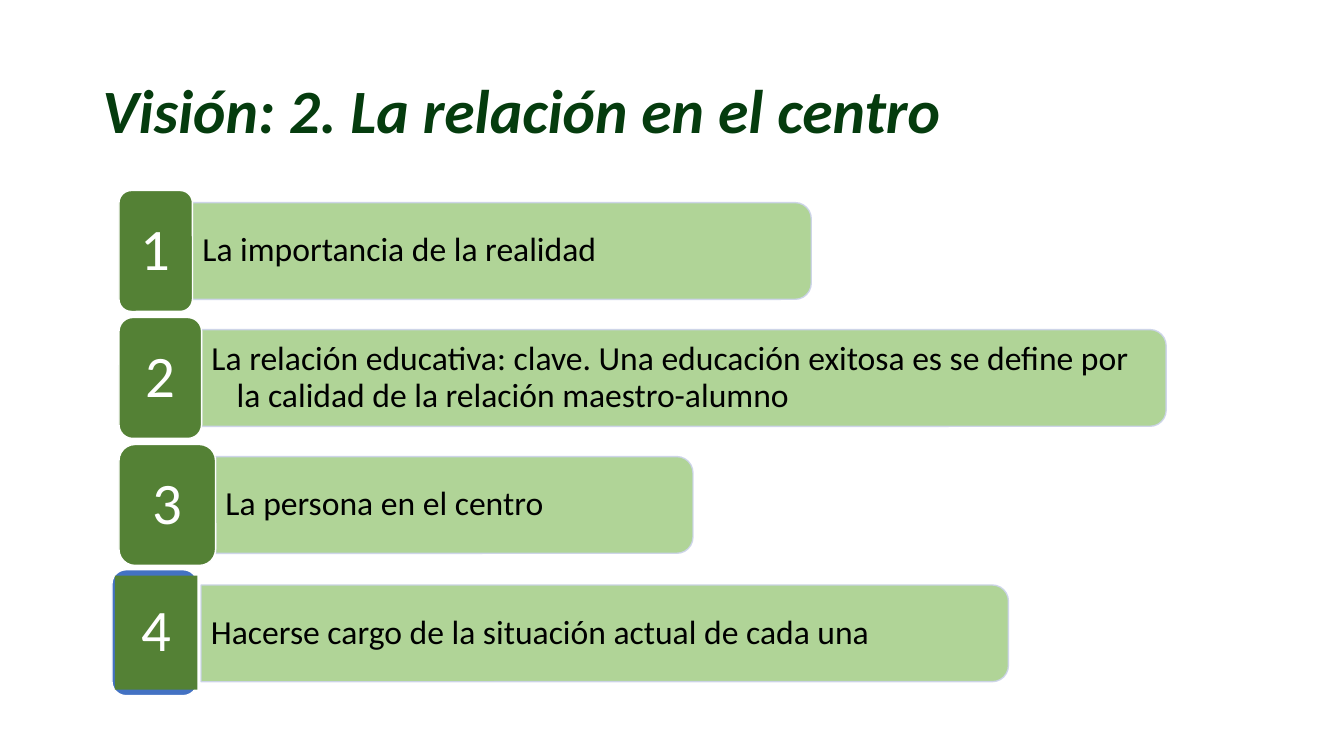
from lxml import etree
from pptx import Presentation
from pptx.dml.color import RGBColor
from pptx.enum import shapes, text
from pptx.oxml.ns import qn
from pptx.util import Pt

KIND = shapes.MSO_SHAPE
INK, GREEN, PALE = "000000", "548135", "A8D08C"
WHITE, BLUE, EDGE = "FFFFFF", "4372C3", "CCD3EA"


def block(kind, box, fill, edge=None, alpha=100):
    """Add a filled shape; alpha is the opacity of fill and edge in percent."""
    shape = slide.shapes.add_shape(kind, *map(Pt, box))
    shape.shadow.inherit = False
    shape.fill.solid()
    shape.fill.fore_color.rgb = RGBColor.from_string(fill)
    if edge:
        shape.line.color.rgb = RGBColor.from_string(edge)
        shape.line.width = Pt(1)
    else:
        shape.line.fill.background()
    if alpha < 100:
        for clr in shape.element.spPr.iter(qn("a:srgbClr")):
            etree.SubElement(clr, qn("a:alpha")).set("val", str(alpha * 1000))
    return shape


def write(shape, words, size, color, align=text.PP_ALIGN.LEFT, inset=7.2):
    frame = shape.text_frame
    frame.word_wrap = True
    frame.vertical_anchor = text.MSO_ANCHOR.MIDDLE
    frame.margin_left = frame.margin_right = Pt(inset)
    frame.margin_top = frame.margin_bottom = Pt(inset / 2)
    par = frame.paragraphs[0]
    par.text = words
    par.alignment = align
    par.line_spacing = 0.9
    par.font.name = "Calibri"
    par.font.size = Pt(size)
    par.font.color.rgb = RGBColor.from_string(color)
    return par


deck = Presentation()
deck.slide_width, deck.slide_height = Pt(960), Pt(540)
slide = deck.slides.add_slide(deck.slide_layouts[6])

title = slide.shapes.add_textbox(Pt(66), Pt(28.8), Pt(828), Pt(104.4))
head = write(title, "Visión: 2. La relación en el centro", 44, "053C0E")
head.font.bold = head.font.italic = True

# words, tile left, tile width, bar left, bar width, middle
rows = [
    ("La importancia de la realidad", 85, 52.5, 137.5, 442, 179.3),
    ("La relación educativa: clave. Una educación exitosa es se define por "
     "la calidad de la relación maestro-alumno", 85, 59, 144, 689, 270),
    ("La persona en el centro", 85, 69, 154, 341, 360.7),
    ("Hacerse cargo de la situación actual de cada una",
     82.1, 59, 143.6, 576.7, 452.4),
]
bar_h, tile_h, text_h = 69.1, 86.4, 62

for num, (words, left, wide, start, span, mid) in enumerate(rows, 1):
    # The bar is a tall shape turned a quarter, so its rounded top faces right
    box = (start + (span - bar_h) / 2, mid - span / 2, bar_h, span)
    bar = block(KIND.ROUND_2_SAME_RECTANGLE, box, PALE, EDGE, 90)
    bar.adjustments[0] = 0.167
    bar.rotation = 90

    label = slide.shapes.add_textbox(
        Pt(start), Pt(mid - text_h / 2), Pt(span - 3.4), Pt(text_h))
    par = write(label, words, 24, INK)
    par.level = 1
    props = par._p.get_or_add_pPr()
    props.set("marL", str(Pt(18)))
    props.set("indent", str(-Pt(18)))

    if num < len(rows):
        tile = block(KIND.ROUNDED_RECTANGLE,
                     (left, mid - tile_h / 2, wide, tile_h), GREEN, WHITE)
        tile.adjustments[0] = 0.167
    else:
        back = block(KIND.ROUNDED_RECTANGLE,
                     (80, mid - 45.5, 61, 90), BLUE, WHITE)
        back.adjustments[0] = 0.167
        tile = block(KIND.RECTANGLE, (left, mid - 41.2, wide, 81.4), GREEN)
    write(tile, str(num), 42, WHITE, text.PP_ALIGN.CENTER, 0)

deck.save("out.pptx")
